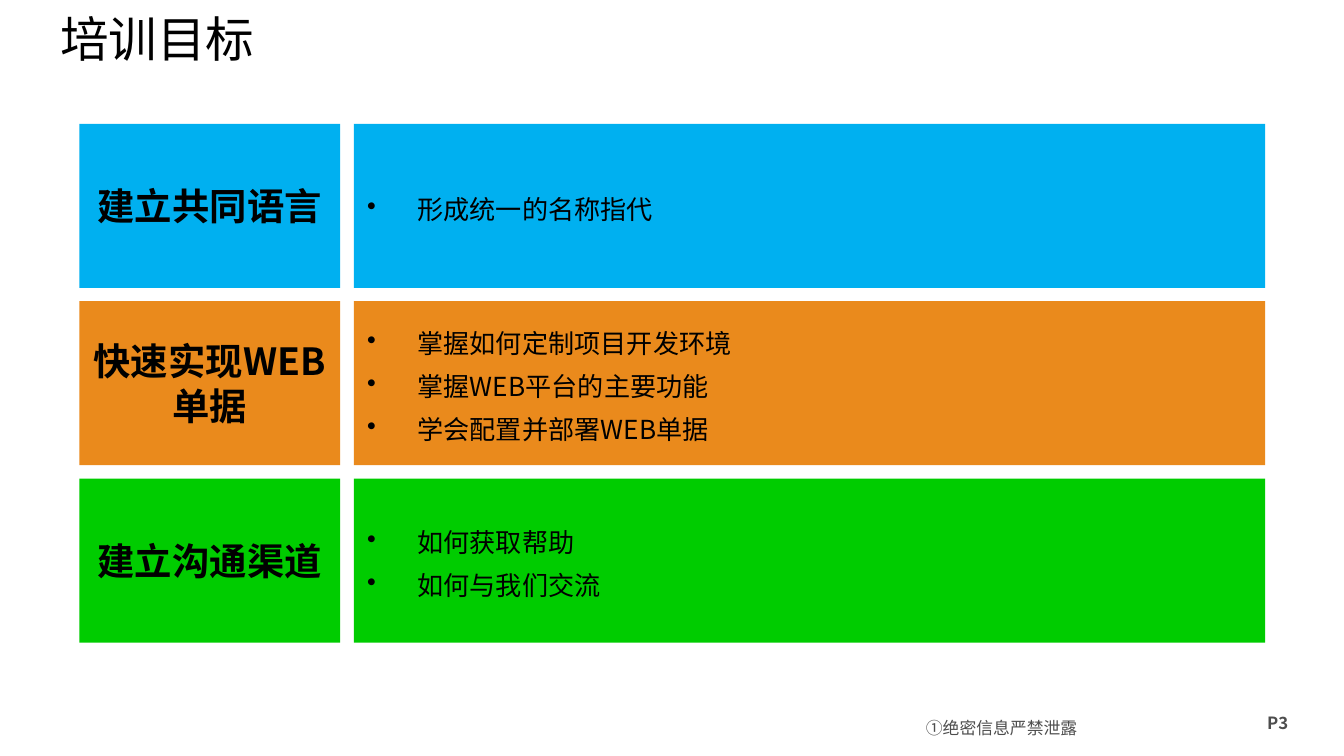
"""Build the training goals slide: three coloured rows, each a heading and its bullet points."""
import dataclasses

import lxml.etree
import pptx
import pptx.dml.color
import pptx.enum.shapes
import pptx.enum.text
import pptx.oxml.ns
import pptx.util

Cm = pptx.util.Cm
Pt = pptx.util.Pt
ALIGN = pptx.enum.text.PP_ALIGN
ANCHOR = pptx.enum.text.MSO_ANCHOR


@dataclasses.dataclass(frozen=True)
class Theme:
    font: str = "Noto Sans CJK SC"
    ink: str = "000000"
    muted: str = "4D4D4D"
    blue: str = "00B0F0"
    orange: str = "EA8A1C"
    green: str = "00CC00"
    title_size: float = 26
    heading_size: float = 20
    body_size: float = 14
    footer_size: float = 9


class SlideBuilder:
    def __init__(self, slide, theme):
        self.slide = slide
        self.theme = theme

    def fill_text(self, shape, lines, size, color, bold=False, anchor=ANCHOR.TOP,
                  bullet=False, space=0, **formats):
        frame = shape.text_frame
        frame.word_wrap = True
        frame.vertical_anchor = anchor
        for index, line in enumerate(lines):
            paragraph = frame.paragraphs[0] if index == 0 else frame.add_paragraph()
            if bullet:
                self.add_bullet(paragraph)
            values = {"alignment": ALIGN.LEFT, "space_before": Pt(space if index else 0), **formats}
            for name, value in values.items():
                setattr(paragraph, name, value)
            run = paragraph.add_run()
            run.text = line
            for name, value in {"size": Pt(size), "bold": bold, "name": self.theme.font}.items():
                setattr(run.font, name, value)
            run.font.color.rgb = pptx.dml.color.RGBColor.from_string(color)
            east_asian = lxml.etree.SubElement(run.font._element, pptx.oxml.ns.qn("a:ea"))
            east_asian.set("typeface", self.theme.font)

    def add_bullet(self, paragraph):
        properties = paragraph._p.get_or_add_pPr()
        properties.set("marL", str(Cm(0.95)))
        properties.set("indent", str(-Cm(0.95)))
        bullet = lxml.etree.SubElement(properties, pptx.oxml.ns.qn("a:buChar"))
        bullet.set("char", "•")

    def text(self, left, top, width, height, line, size, color, margins=None, **formats):
        box = self.slide.shapes.add_textbox(Cm(left), Cm(top), Cm(width), Cm(height))
        for name, value in (margins or {}).items():
            setattr(box.text_frame, name, value)
        self.fill_text(box, [line], size, color, **formats)

    def panel(self, left, top, width, height, fill, lines, size, **formats):
        shape = self.slide.shapes.add_shape(
            pptx.enum.shapes.MSO_SHAPE.RECTANGLE, Cm(left), Cm(top), Cm(width), Cm(height))
        shape.shadow.inherit = False
        shape.fill.solid()
        shape.fill.fore_color.rgb = pptx.dml.color.RGBColor.from_string(fill)
        shape.line.fill.background()
        self.fill_text(shape, lines, size, self.theme.ink, anchor=ANCHOR.MIDDLE, **formats)


def main():
    theme = Theme()
    presentation = pptx.Presentation()
    presentation.slide_width, presentation.slide_height = Cm(25.4), Cm(14.28)
    builder = SlideBuilder(presentation.slides.add_slide(presentation.slide_layouts[6]), theme)

    builder.text(0.89, 0, 19.81, 1.45, "培训目标", theme.title_size, theme.ink, anchor=ANCHOR.MIDDLE)

    goals = [
        (theme.blue, "建立共同语言", ["形成统一的名称指代"]),
        (theme.orange, "快速实现WEB单据",
         ["掌握如何定制项目开发环境", "掌握WEB平台的主要功能", "学会配置并部署WEB单据"]),
        (theme.green, "建立沟通渠道", ["如何获取帮助", "如何与我们交流"]),
    ]
    first_top, pitch, height = 2.34, 3.35, 3.1
    for row, (color, heading, points) in enumerate(goals):
        top = first_top + row * pitch
        builder.panel(1.5, top, 4.93, height, color, [heading], theme.heading_size,
                      bold=True, alignment=ALIGN.CENTER)
        builder.panel(6.69, top, 17.22, height, color, points, theme.body_size,
                      bullet=True, space=2.8, line_spacing=1.2)

    margins = {"margin_left": Cm(0.2), "margin_right": Cm(0.2),
               "margin_top": Cm(0.03), "margin_bottom": Cm(0.03)}
    builder.text(17.3, 13.41, 4.5, 0.69, "①绝密信息严禁泄露", theme.footer_size, theme.muted,
                 margins, alignment=ALIGN.JUSTIFY, line_spacing=Pt(14))
    builder.text(23.7, 13.34, 1.42, 0.64, "P3", theme.footer_size, theme.muted, bold=True)

    presentation.save("out.pptx")


if __name__ == "__main__":
    main()
